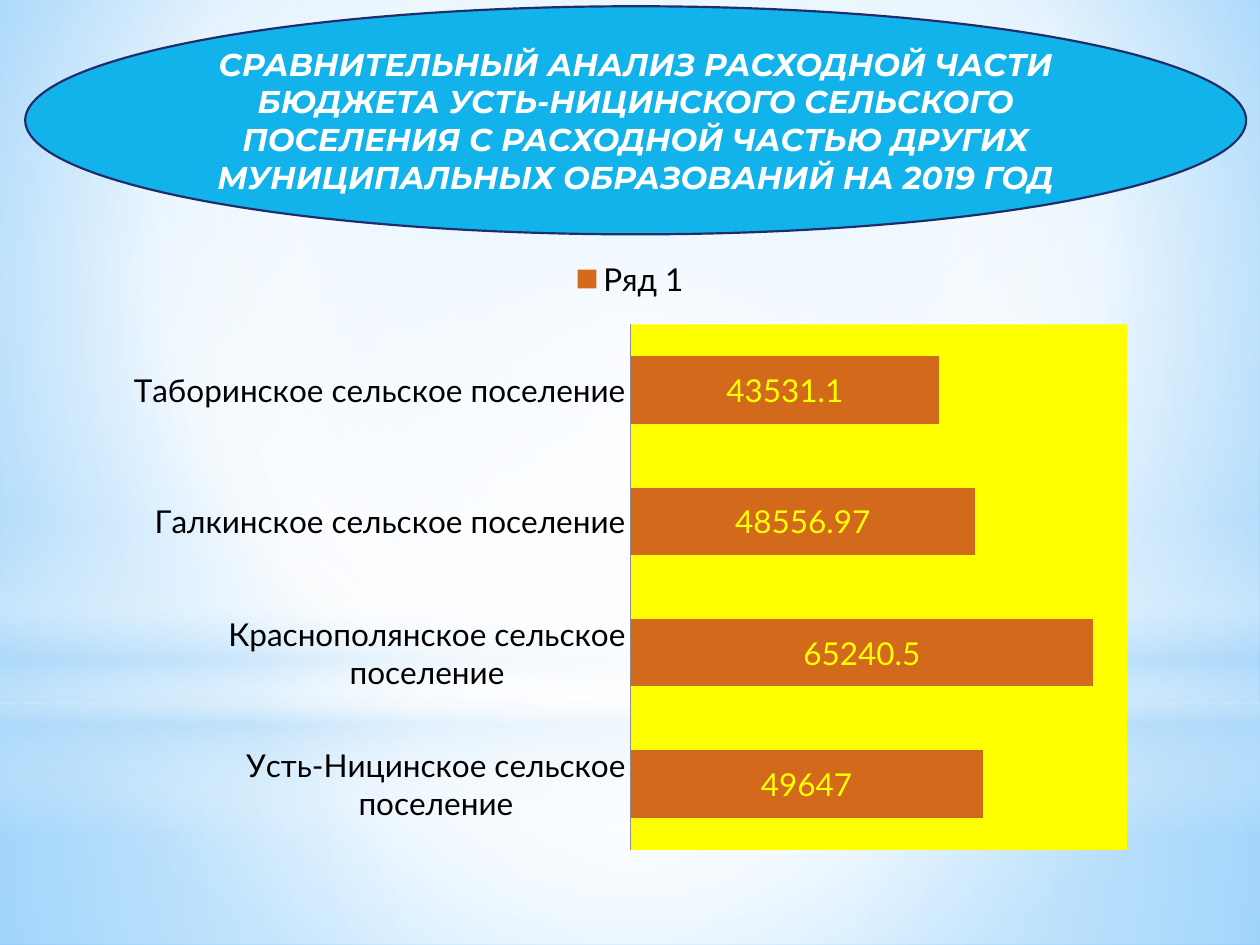
"""Build a slide comparing municipal budget spending for 2019."""
from lxml import etree
from pptx import Presentation
from pptx.chart.data import CategoryChartData
from pptx.dml.color import RGBColor
from pptx.enum import chart as ch, shapes, text
from pptx.oxml import parse_xml
from pptx.oxml.ns import nsdecls, qn
from pptx.util import Inches, Pt

WHITE = RGBColor(0xFF, 0xFF, 0xFF)
BLACK = RGBColor(0, 0, 0)
SKY = RGBColor(0xB4, 0xDC, 0xFA)
BLUE = RGBColor(0x12, 0xB2, 0xEB)
NAVY = RGBColor(0x1F, 0x2E, 0x69)
YELLOW = RGBColor(0xFF, 0xFF, 0)
ORANGE = RGBColor(0xD2, 0x69, 0x1B)
PEACH = RGBColor(0xFF, 0xB9, 0xA0)
MINT = RGBColor(0x5E, 0xCC, 0xF3)
GRAY = RGBColor(0x8B, 0x8B, 0x8B)

TITLE = ("СРАВНИТЕЛЬНЫЙ АНАЛИЗ РАСХОДНОЙ ЧАСТИ БЮДЖЕТА УСТЬ-НИЦИНСКОГО "
         "СЕЛЬСКОГО ПОСЕЛЕНИЯ С РАСХОДНОЙ ЧАСТЬЮ ДРУГИХ МУНИЦИПАЛЬНЫХ "
         "ОБРАЗОВАНИЙ НА 2019 ГОД")
SPENDING = {
    "Усть-Ницинское сельское поселение": 49647,
    "Краснополянское сельское поселение": 65240.5,
    "Галкинское сельское поселение": 48556.97,
    "Таборинское сельское поселение": 43531.1,
}
SERIES = [("Ряд 1", list(SPENDING.values()), ORANGE),
          ("Ряд 2", [None] * len(SPENDING), MINT),
          ("Ряд 3", [None] * len(SPENDING), PEACH)]
PLOT = {"x": 0.5, "y": 0.128, "w": 0.481, "h": 0.841}

CENTER = '<a:path path="circle"><a:fillToRect l="50000" t="50000" r="50000" b="50000"/></a:path>'
TOP = '<a:path path="circle"><a:fillToRect l="20000" t="10000" r="20000" b="60000"/></a:path>'
DOWN = '<a:lin ang="5400000" scaled="0"/>'
BACKDROP = [(0, RGBColor(0x9E, 0xD5, 0xFF), 100), (60, WHITE, 100),
            (100, RGBColor(0x5B, 0xB9, 0xFF), 100)]
RECT, OVAL = shapes.MSO_SHAPE.RECTANGLE, shapes.MSO_SHAPE.OVAL
GLOWS = [
    (RECT, (0, 5.58, 10, 1.92), CENTER, [(0, WHITE, 91), (37, WHITE, 76), (100, SKY, 79)]),
    (RECT, (0, 0, 10, 5.58), CENTER, [(0, WHITE, 89), (48, WHITE, 62), (100, SKY, 79)]),
    (RECT, (0, 4.12, 10, 2.5), DOWN, [(0, WHITE, 0), (29, WHITE, 30), (45, SKY, 40),
                                      (55, WHITE, 26), (65, SKY, 60), (100, WHITE, 0)]),
    (OVAL, (0, 1.75, 10, 5.58), CENTER, [(0, WHITE, 100), (56, WHITE, 0)]),
]


def set_gradient(fill, parent, stops, shade):
    fill.solid()
    gs = "".join(f'<a:gs pos="{pos * 1000}"><a:srgbClr val="{color}">'
                 f'<a:alpha val="{alpha * 1000}"/></a:srgbClr></a:gs>'
                 for pos, color, alpha in stops)
    grad = parse_xml(f'<a:gradFill {nsdecls("a")} rotWithShape="1">'
                     f'<a:gsLst>{gs}</a:gsLst>{shade}</a:gradFill>')
    parent.replace(parent.find(qn("a:solidFill")), grad)


def add_shape(s, kind, box):
    sp = s.shapes.add_shape(kind, *map(Inches, box))
    sp.shadow.inherit = False
    return sp


def set_font(font, name="Lato", size=18, color=BLACK, bold=False, italic=False):
    font.name, font.size, font.bold, font.italic = name, Pt(size), bold, italic
    font.color.rgb = color


def write(sp, words, align=text.PP_ALIGN.CENTER, **style):
    tf = sp.text_frame
    tf.word_wrap = True
    tf.vertical_anchor = text.MSO_ANCHOR.MIDDLE
    p = tf.paragraphs[0]
    p.alignment = align
    r = p.add_run()
    r.text = words
    set_font(r.font, **style)


def add_spending_chart(s, box):
    data = CategoryChartData()
    data.categories = list(SPENDING)
    for name, values, _ in SERIES:
        data.add_series(name, values)
    chart = s.shapes.add_chart(ch.XL_CHART_TYPE.BAR_STACKED, *map(Inches, box), data).chart
    set_font(chart.font)
    chart.has_title = False

    chart.has_legend = True
    legend = chart.legend
    legend.position = ch.XL_LEGEND_POSITION.TOP
    legend.include_in_layout = False
    for i in range(2):
        legend._element.insert(1 + i, parse_xml(
            f'<c:legendEntry {nsdecls("c")}><c:idx val="{i}"/><c:delete val="1"/></c:legendEntry>'))

    axis = chart.category_axis
    axis.major_tick_mark = ch.XL_TICK_MARK.NONE
    axis.format.line.color.rgb = GRAY
    values = chart.value_axis
    values.minimum_scale, values.maximum_scale = 0, 70000
    values.has_major_gridlines = False
    values.visible = False

    plot = chart.plots[0]
    plot.gap_width, plot.overlap, plot.vary_by_categories = 95, 100, False
    for series, (_, _, color) in zip(plot.series, SERIES):
        series.format.fill.solid()
        series.format.fill.fore_color.rgb = color
    labels = plot.series[0].data_labels
    labels.show_value = True
    labels.position = ch.XL_LABEL_POSITION.CENTER
    set_font(labels.font, color=YELLOW)

    area = chart._chartSpace.chart.plotArea
    for old in area.findall(qn("c:layout")):
        area.remove(old)
    modes = "".join(f'<c:{k}Mode val="edge"/>' for k in "xy")
    sizes = "".join(f'<c:{k} val="{v}"/>' for k, v in PLOT.items())
    area.insert(0, parse_xml(
        f'<c:layout {nsdecls("c")}><c:manualLayout><c:layoutTarget val="inner"/>'
        f'{modes}{sizes}</c:manualLayout></c:layout>'))
    area.append(parse_xml(
        f'<c:spPr {nsdecls("c", "a")}><a:solidFill><a:srgbClr val="{YELLOW}"/>'
        '</a:solidFill></c:spPr>'))


def main():
    prs = Presentation()
    prs.slide_width, prs.slide_height = Inches(10), Inches(7.5)
    s = prs.slides.add_slide(prs.slide_layouts[6])
    fill = s.background.fill
    fill.solid()
    set_gradient(fill, next(s._element.iter(qn("p:bgPr"))), BACKDROP, TOP)
    for kind, box, shade, stops in GLOWS:
        sp = add_shape(s, kind, box)
        set_gradient(sp.fill, sp._element.spPr, stops, shade)
        sp.line.fill.background()

    add_spending_chart(s, (0.91, 1.94, 8.19, 4.96))

    sp = add_shape(s, OVAL, (0.2, 0.05, 9.69, 1.81))
    sp.fill.solid()
    sp.fill.fore_color.rgb = BLUE
    sp.line.color.rgb = NAVY
    sp.line.width = Pt(1.25)
    write(sp, TITLE, name="Montserrat", color=WHITE, bold=True, italic=True)
    prs.save("out.pptx")


if __name__ == "__main__":
    main()
